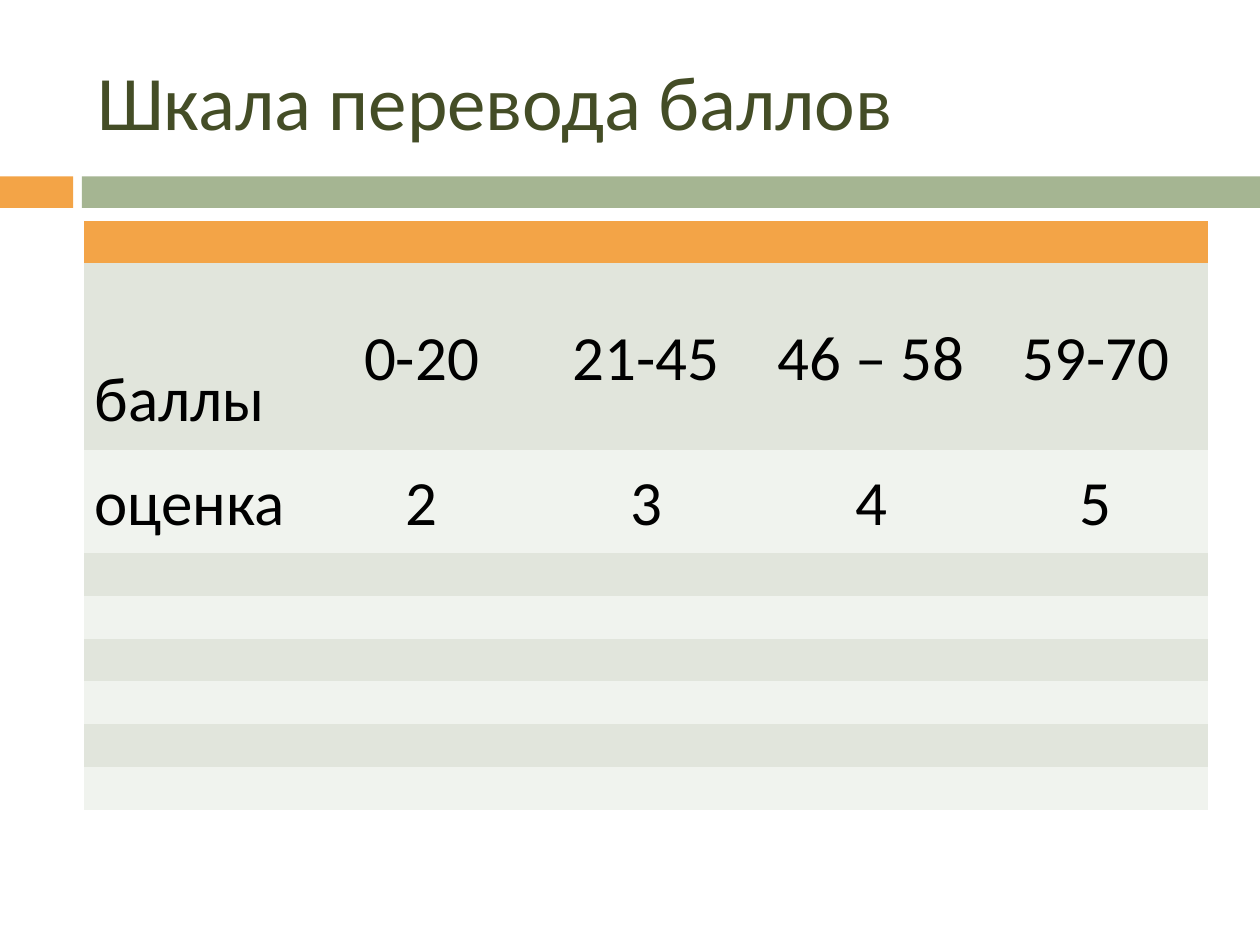
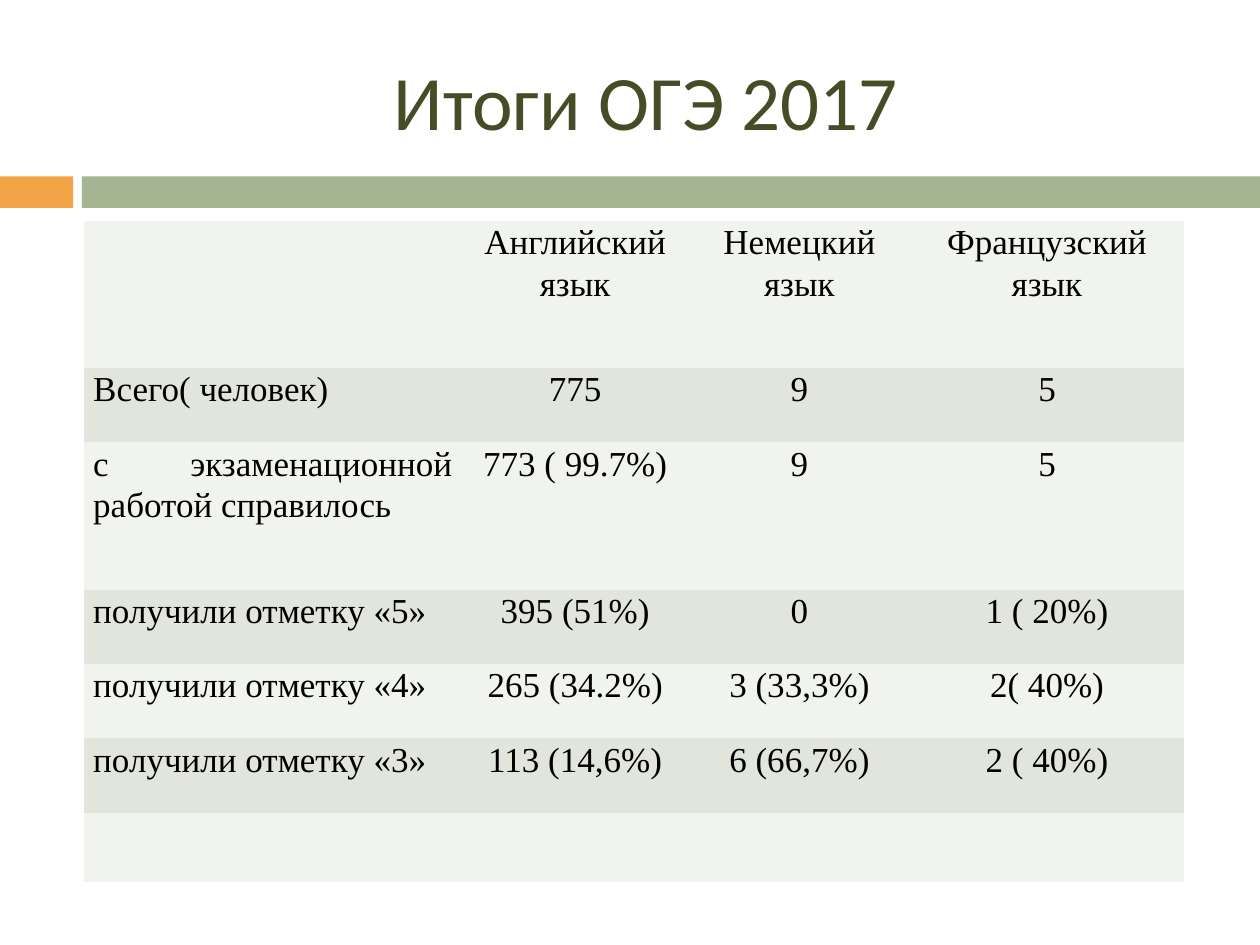
from pptx import Presentation
from pptx.dml.color import RGBColor
from pptx.enum.shapes import MSO_SHAPE
from pptx.enum.text import MSO_ANCHOR, MSO_AUTO_SIZE, PP_ALIGN
from pptx.oxml.ns import qn
from pptx.util import Inches, Pt

# Shared look
WIDTH, HEIGHT = 10, 7.5
ORANGE, GREEN, OLIVE, BLACK = "F3A447", "A5B592", "444D26", "000000"
DARK_ROW, LIGHT_ROW = "E1E5DC", "F0F3EE"
TITLE_BOX = (0.67, 0.25, 8.92, 1.08)
BAND_TOP, BAND_HEIGHT = 1.4, 0.25
TABLE_LEFT, TABLE_TOP = 0.67, 1.75
LINE_SPACING = 1.07
NO_GRID_STYLE = "{2D5ABB26-0587-4C30-8999-92F81FD0307C}"

# Score scale: an empty header row, two filled rows, six empty rows
SCALE_ROWS = [
    [""] * 5,
    ["баллы", "0-20", "21-45", "46 – 58", "59-70"],
    ["оценка", "2", "3", "4", "5"],
] + [[""] * 5 for _ in range(6)]
SCALE_HEIGHTS = [0.34, 1.48, 0.82] + [0.34] * 6

# Exam results by language
RESULT_ROWS = [
    ["", "Английский язык", "Немецкий язык", "Французский язык"],
    ["Всего( человек)", "775", "9", "5"],
    ["с экзаменационной работой справилось", "773 ( 99.7%)", "9", "5"],
    ["получили отметку «5»", "395 (51%)", "0", "1 ( 20%)"],
    ["получили отметку «4»", "265 (34.2%)", "3 (33,3%)", "2( 40%)"],
    ["получили отметку «3»", "113 (14,6%)", "6 (66,7%)", "2 ( 40%)"],
    [""] * 4,
]
RESULT_WIDTHS = [2.99, 1.81, 1.75, 2.18]
RESULT_HEIGHTS = [1.17, 0.59, 1.17, 0.59, 0.59, 0.59, 0.55]


def color(hex_string):
    return RGBColor.from_string(hex_string)


def paint(target, hex_string):
    target.fill.solid()
    target.fill.fore_color.rgb = color(hex_string)


def format_text(para, font_name, size, hex_string, align):
    para.alignment = align
    for span in para.runs:
        span.font.name = font_name
        span.font.size = Pt(size)
        span.font.color.rgb = color(hex_string)


def add_bands(page):
    for left, width, fill in ((0, 0.58, ORANGE), (0.65, WIDTH - 0.65, GREEN)):
        box = (Inches(n) for n in (left, BAND_TOP, width, BAND_HEIGHT))
        band = page.shapes.add_shape(MSO_SHAPE.RECTANGLE, *box)
        paint(band, fill)
        band.line.fill.background()
        band.shadow.inherit = False


def add_page(deck, heading, align):
    """Titled slide with the divider bands."""
    page = deck.slides.add_slide(deck.slide_layouts[5])
    add_bands(page)
    title = page.shapes.title
    title.left, title.top, title.width, title.height = map(Inches, TITLE_BOX)
    frame = title.text_frame
    frame.text = heading
    frame.auto_size = MSO_AUTO_SIZE.NONE
    frame.vertical_anchor = MSO_ANCHOR.MIDDLE
    format_text(frame.paragraphs[0], "Calibri", 44, OLIVE, align)
    return page


def fill_cell(cell, text, font_name, size, anchor, margins, align):
    side, edge = margins
    cell.margin_left = cell.margin_right = Inches(side)
    cell.margin_top = cell.margin_bottom = Inches(edge if text else 0)
    cell.vertical_anchor = anchor
    cell.text_frame.text = text
    para = cell.text_frame.paragraphs[0]
    para.line_spacing = LINE_SPACING
    format_text(para, font_name, size, BLACK, align)


def add_banded_table(page, rows, widths, heights, row_fills, font_name, size,
                     anchor, margins):
    """Table whose first column is justified and the others centred."""
    frame = page.shapes.add_table(
        len(rows), len(widths), Inches(TABLE_LEFT), Inches(TABLE_TOP),
        Inches(sum(widths)), Inches(sum(heights)))
    for style in frame._element.iter(qn("a:tableStyleId")):
        style.text = NO_GRID_STYLE
    table = frame.table
    table.first_row = table.horz_banding = False
    for column, width in zip(table.columns, widths):
        column.width = Inches(width)
    for row, height, fill, texts in zip(table.rows, heights, row_fills, rows):
        row.height = Inches(height)
        for index, (cell, text) in enumerate(zip(row.cells, texts)):
            paint(cell, fill)
            align = PP_ALIGN.CENTER if index else PP_ALIGN.JUSTIFY
            fill_cell(cell, text, font_name, size, anchor, margins, align)
    return table


def alternate(first, second, count):
    return [second if index % 2 else first for index in range(count)]


def build_scale_page(deck):
    page = add_page(deck, "Шкала перевода баллов", PP_ALIGN.LEFT)
    widths = [TITLE_BOX[2] / 5] * 5
    fills = [ORANGE] + alternate(DARK_ROW, LIGHT_ROW, len(SCALE_ROWS) - 1)
    table = add_banded_table(page, SCALE_ROWS, widths, SCALE_HEIGHTS, fills,
                             "Calibri", 36, MSO_ANCHOR.MIDDLE, (0.08, 0.08))
    # The row label sits one line lower than its values
    table.cell(1, 0).margin_top = Inches(0.73)


def build_results_page(deck):
    page = add_page(deck, "Итоги ОГЭ 2017", PP_ALIGN.CENTER)
    fills = alternate(LIGHT_ROW, DARK_ROW, len(RESULT_ROWS))
    add_banded_table(page, RESULT_ROWS, RESULT_WIDTHS, RESULT_HEIGHTS, fills,
                     "Times New Roman", 20, MSO_ANCHOR.TOP, (0.07, 0))


def main():
    deck = Presentation()
    deck.slide_width, deck.slide_height = Inches(WIDTH), Inches(HEIGHT)
    build_scale_page(deck)
    build_results_page(deck)
    deck.save("out.pptx")


if __name__ == "__main__":
    main()
